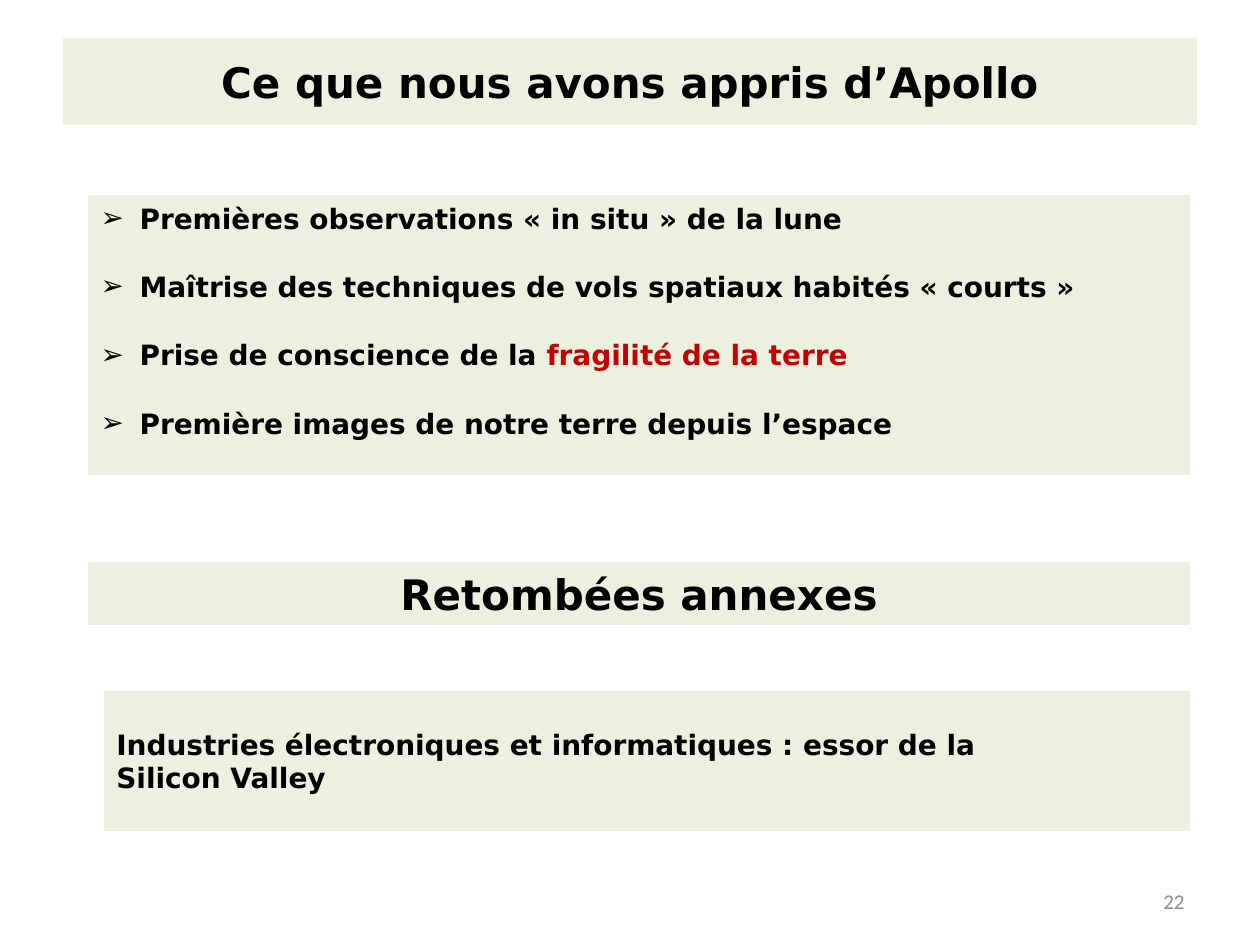
from lxml.etree import SubElement
from pptx import Presentation
from pptx.dml.color import RGBColor
from pptx.enum.shapes import MSO_SHAPE
from pptx.enum.text import MSO_ANCHOR as Anchor, MSO_AUTO_SIZE as AutoSize, PP_ALIGN as Align
from pptx.oxml.ns import qn
from pptx.util import Emu, Pt

PX = 914400 / 126
COLORS = {"panel": "EBF1DE", "text": "000000", "accent": "C00000", "number": "8C8C8C"}
FONT = "DejaVu Sans"

FINDINGS = [
    [("Premières observations «\u00a0in situ\u00a0» de la lune", "text")],
    [("Maîtrise des techniques de vols spatiaux habités «\u00a0courts\u00a0»", "text")],
    [("Prise de conscience de la ", "text"), ("fragilité de la terre", "accent")],
    [("Première images de notre terre depuis l’espace", "text")],
]


def px(length):
    return Emu(round(length * PX))


def color(name):
    return RGBColor.from_string(COLORS[name])


def place(shape, box):
    shape.left, shape.top, shape.width, shape.height = map(px, box)


def style_panel(shape, anchor):
    shape.fill.solid()
    shape.fill.fore_color.rgb = color("panel")
    shape.line.fill.background()
    frame = shape.text_frame
    frame.word_wrap = True
    frame.auto_size = AutoSize.NONE
    frame.vertical_anchor = anchor


def style_paragraph(paragraph, size, align=Align.LEFT, bold=True, name=FONT, tint="text"):
    paragraph.alignment = align
    font = paragraph.font
    font.size, font.bold, font.name = Pt(size), bold, name
    font.color.rgb = color(tint)


def add_bullet(paragraph, indent):
    properties = paragraph._p.get_or_add_pPr()
    properties.set("marL", str(px(indent)))
    properties.set("indent", str(-px(indent)))
    # Bullet elements go before the default run properties
    default_run = properties.find(qn("a:defRPr"))
    bullet_font = SubElement(properties, qn("a:buFont"), typeface=FONT)
    bullet = SubElement(properties, qn("a:buChar"), char="➢")
    if default_run is not None:
        default_run.addprevious(bullet_font)
        default_run.addprevious(bullet)


def fill_title(title, box):
    place(title, box)
    style_panel(title, Anchor.MIDDLE)
    title.text_frame.text = "Ce que nous avons appris d’Apollo"
    style_paragraph(title.text_frame.paragraphs[0], 24, Align.CENTER)


def fill_findings(body, box):
    place(body, box)
    style_panel(body, Anchor.TOP)
    frame = body.text_frame
    for index, parts in enumerate(FINDINGS):
        paragraph = frame.add_paragraph() if index else frame.paragraphs[0]
        style_paragraph(paragraph, 16)
        paragraph.space_before, paragraph.space_after = Pt(0), Pt(19.8)
        add_bullet(paragraph, 39)
        for text, tint in parts:
            run = paragraph.add_run()
            run.text = text
            run.font.color.rgb = color(tint)


def add_panel(slide, box, text, size, align):
    shape = slide.shapes.add_shape(MSO_SHAPE.RECTANGLE, *map(px, box))
    shape.shadow.inherit = False
    style_panel(shape, Anchor.MIDDLE)
    shape.text_frame.text = text
    style_paragraph(shape.text_frame.paragraphs[0], size, align)


def add_page_number(slide, box):
    frame = slide.shapes.add_textbox(*map(px, box)).text_frame
    frame.word_wrap = True
    frame.vertical_anchor = Anchor.MIDDLE
    frame.text = "22"
    style_paragraph(frame.paragraphs[0], 12, Align.RIGHT, False, "Calibri", "number")


def main():
    presentation = Presentation()
    presentation.slide_width, presentation.slide_height = px(1260), px(945)
    slide = presentation.slides.add_slide(presentation.slide_layouts[1])

    # Lessons learned
    fill_title(slide.shapes.title, (63, 38, 1134, 87))
    fill_findings(slide.placeholders[1], (88, 195, 1102, 280))

    # Side benefits
    add_panel(slide, (88, 562, 1102, 63), "Retombées annexes", 24, Align.CENTER)
    add_panel(slide, (104, 691, 1086, 140),
              "Industries électroniques et informatiques : essor de la \vSilicon Valley",
              16, Align.LEFT)

    add_page_number(slide, (903, 876, 294, 50))
    presentation.save("out.pptx")


if __name__ == "__main__":
    main()
